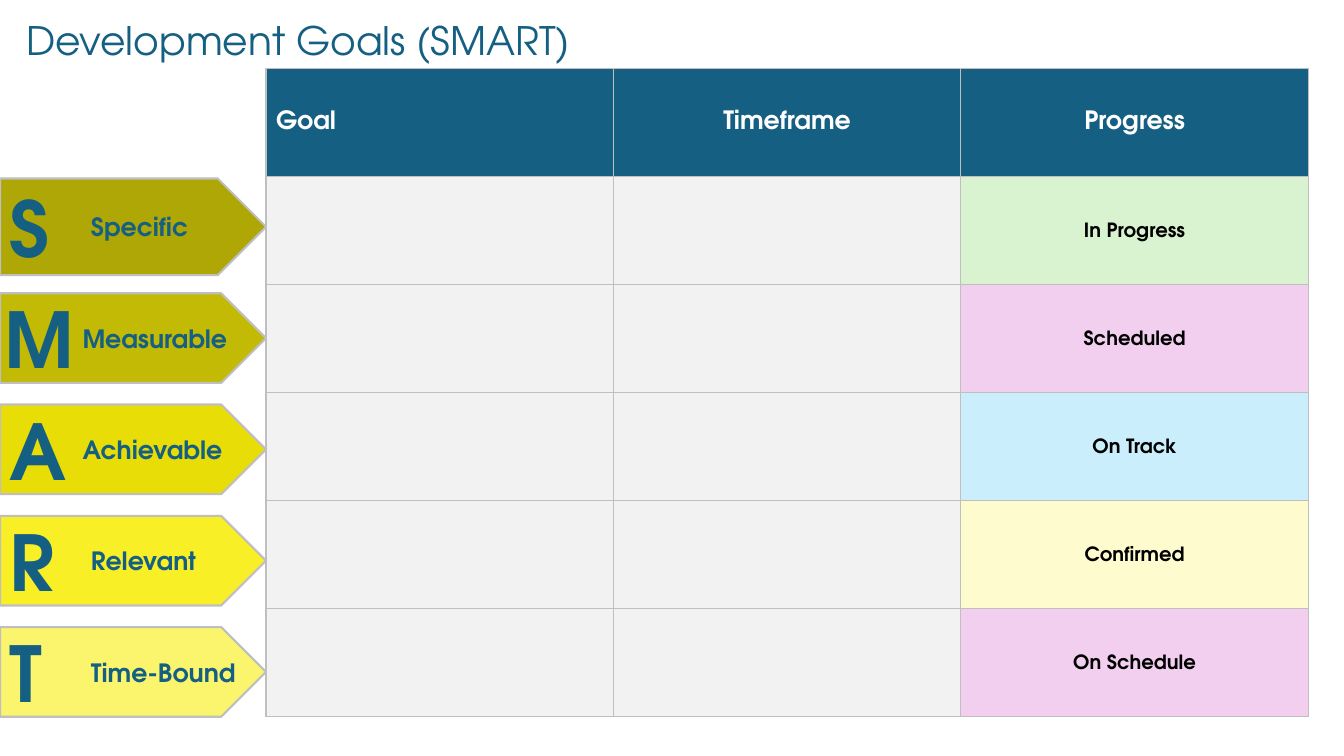
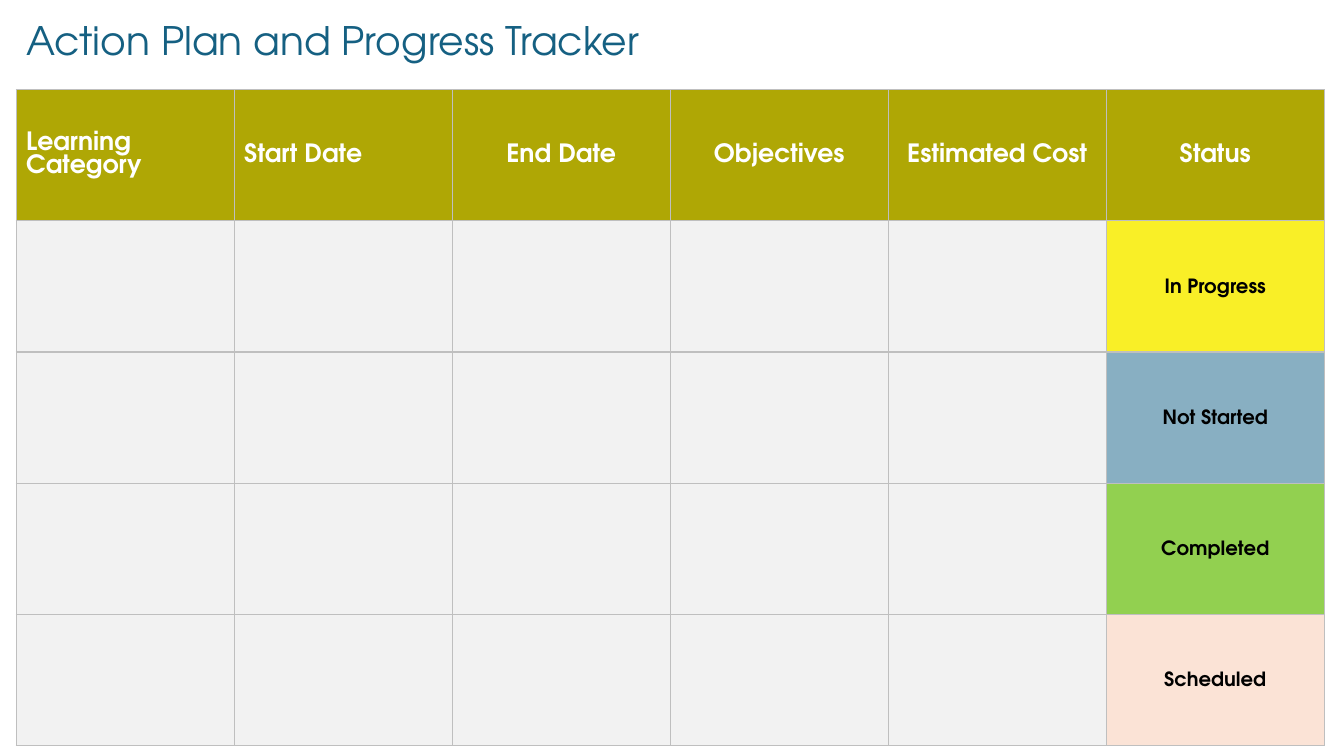
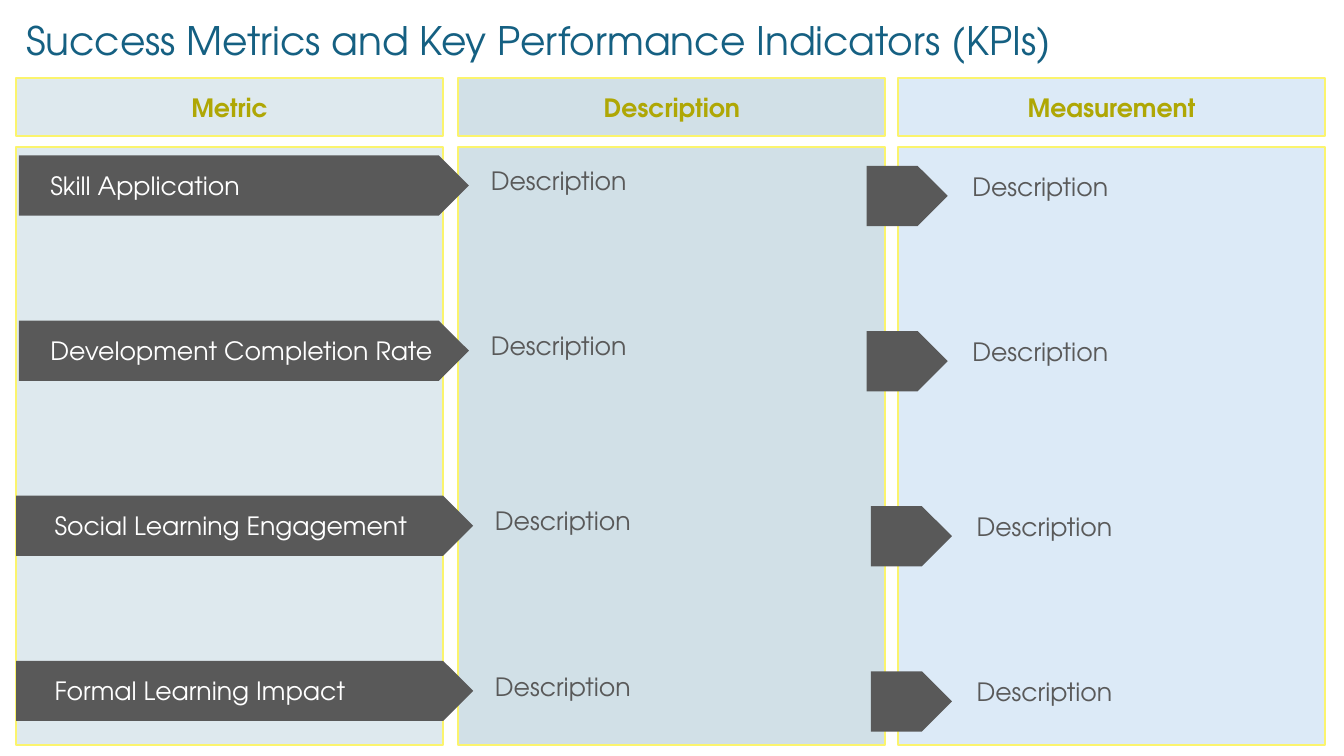
from pptx import Presentation
from pptx.util import Pt
from pptx.dml.color import RGBColor
from pptx.enum.shapes import MSO_SHAPE
from pptx.enum.text import MSO_ANCHOR, MSO_AUTO_SIZE, PP_ALIGN
from pptx.oxml.ns import qn
from lxml.etree import SubElement

# Shared look
FONT = "TeX Gyre Adventor"
EDGE = 11.5
COLORS = {
    "blue": "156082", "olive": "AFA705", "mustard": "C3BA05",
    "gold": "E8DD06", "yellow": "F9EF27", "lemon": "FBF46D",
    "white": "FFFFFF", "black": "000000", "line": "BFBFBF",
    "empty": "F2F2F2", "dark": "595959", "mint": "D9F2D0",
    "pink": "F2CFEE", "sky": "CAEEFB", "cream": "FEFCCE",
    "steel": "88AFC2", "green": "92D050", "peach": "FBE3D6",
    "mist": "DEE9EE", "haze": "D1E0E7", "pale": "DCEAF7",
}

# Slide contents
SMART = [  # word, arrow top, height, colour, letter left, word left
    ("Specific", 127.5, 69, "olive", 0, 65),
    ("Measurable", 209.5, 64, "mustard", -3.6, 59),
    ("Achievable", 289, 64, "gold", 0, 59),
    ("Relevant", 368.5, 64, "yellow", 0, 65),
    ("Time-Bound", 448, 64, "lemon", 0, 65),
]
GOALS = [("In Progress", "mint"), ("Scheduled", "pink"),
         ("On Track", "sky"), ("Confirmed", "cream"),
         ("On Schedule", "pink")]
PLAN = [("In Progress", "yellow"), ("Not Started", "steel"),
        ("Completed", "green"), ("Scheduled", "peach")]
PANELS = [("Metric", EDGE, "mist"), ("Description", 327.5, "haze"),
          ("Measurement", 641.5, "pale")]
METRICS = [  # name, arrow top, arrow left, shift of the row
    ("Skill Application", 111, 13.5, 0),
    ("Development Completion Rate", 229, 13.5, 0),
    ("Social Learning Engagement", 354, EDGE, 3),
    ("Formal Learning Impact", 472, EDGE, 3),
]


def rgb(name):
    return RGBColor.from_string(COLORS[name])


def write(frame, text, size, color, bold=False, align=PP_ALIGN.LEFT):
    frame.text = text
    para = frame.paragraphs[0]
    para.alignment = align
    font = para.runs[0].font
    font.name, font.size, font.bold = FONT, Pt(size), bold
    font.color.rgb = rgb(color)
    return para


def add_slide(deck, title, width=582):
    slide = deck.slides.add_slide(deck.slide_layouts[5])
    head = slide.shapes.title
    head.left, head.top = Pt(EDGE), Pt(8)
    head.width, head.height = Pt(width), Pt(41)
    frame = head.text_frame
    frame.auto_size = MSO_AUTO_SIZE.NONE
    frame.vertical_anchor = MSO_ANCHOR.TOP
    write(frame, title, 28, "blue")
    return slide


def add_box(slide, kind, left, top, width, height, fill, line=None):
    box = slide.shapes.add_shape(
        kind, Pt(left), Pt(top), Pt(width), Pt(height))
    box.shadow.inherit = False
    box.fill.solid()
    box.fill.fore_color.rgb = rgb(fill)
    if line:
        box.line.color.rgb = rgb(line)
        box.line.width = Pt(1.5)
    else:
        box.line.fill.background()
    return box


def add_arrow(slide, left, top, width, height, fill, line=None):
    return add_box(slide, MSO_SHAPE.PENTAGON, left, top, width, height,
                   fill, line)


def label(arrow, text, color, inset, bold=False):
    frame = arrow.text_frame
    frame.margin_left, frame.margin_right = Pt(inset), 0
    frame.vertical_anchor = MSO_ANCHOR.MIDDLE
    write(frame, text, 18, color, bold)


def add_text(slide, text, left, top, width, height, size, color,
             bold=False):
    box = slide.shapes.add_textbox(
        Pt(left), Pt(top), Pt(width), Pt(height))
    frame = box.text_frame
    frame.word_wrap = True
    frame.vertical_anchor = MSO_ANCHOR.MIDDLE
    write(frame, text, size, color, bold)


def paint(cell, fill):
    # Borders come before the fill in the cell properties
    props = cell._tc.get_or_add_tcPr()
    for side in ("lnL", "lnR", "lnT", "lnB"):
        line = SubElement(props, qn("a:" + side), w=str(Pt(1)))
        solid = SubElement(line, qn("a:solidFill"))
        SubElement(solid, qn("a:srgbClr"), val=COLORS["line"])
    cell.fill.solid()
    cell.fill.fore_color.rgb = rgb(fill)
    cell.vertical_anchor = MSO_ANCHOR.MIDDLE


def add_grid(slide, left, top, col, row, heads, fill, states, lefts):
    """Table with a header row and a coloured status in the last column."""
    rows, cols = len(states) + 1, len(heads)
    grid = slide.shapes.add_table(
        rows, cols, Pt(left), Pt(top), Pt(col * cols), Pt(row * rows)).table
    grid.first_row = grid.horz_banding = False
    for item in grid.columns:
        item.width = Pt(col)
    for item in grid.rows:
        item.height = Pt(row)
    # Header
    for i, head in enumerate(heads):
        cell = grid.cell(0, i)
        paint(cell, fill)
        align = PP_ALIGN.LEFT if i < lefts else PP_ALIGN.CENTER
        write(cell.text_frame, head, 18, "white", True, align)
    # Body
    for i, (state, color) in enumerate(states, 1):
        for j in range(cols - 1):
            paint(grid.cell(i, j), "empty")
        cell = grid.cell(i, cols - 1)
        paint(cell, color)
        cell.margin_left = cell.margin_right = Pt(5)
        cell.margin_top = cell.margin_bottom = 0
        para = write(cell.text_frame, state, 14, "black", True,
                     PP_ALIGN.CENTER)
        para.line_spacing, para.space_after = 1.15, Pt(8)


def add_goals(deck):
    slide = add_slide(deck, "Development Goals (SMART)")
    for word, top, high, fill, _, inset in SMART:
        arrow = add_arrow(slide, 0, top, 190, high, fill, "line")
        label(arrow, word, "blue", inset, True)
    add_grid(slide, 190, 49, 248.2, 77.15,
             ["Goal", "Timeframe", "Progress"], "blue", GOALS, 1)
    for word, top, high, _, left, _ in SMART:
        add_text(slide, word[0], left, top, 60, high, 55, "blue", True)


def add_plan(deck):
    slide = add_slide(deck, "Action Plan and Progress Tracker")
    heads = ["Learning Category", "Start Date", "End Date", "Objectives",
             "Estimated Cost", "Status"]
    add_grid(slide, EDGE, 64, 155.75, 93.75, heads, "olive", PLAN, 2)


def add_metrics(deck):
    slide = add_slide(
        deck, "Success Metrics and Key Performance Indicators (KPIs)", 935)
    # Column panels
    for name, left, fill in PANELS:
        head, _ = [add_box(slide, MSO_SHAPE.RECTANGLE, left, top, 305, high,
                           fill, "lemon")
                   for top, high in ((56, 41), (105, 427))]
        write(head.text_frame, name, 18, "olive", True, PP_ALIGN.CENTER)
    # Metric rows
    for name, top, left, shift in METRICS:
        arrow = add_arrow(slide, left, top, 335 + shift - left, 43, "dark")
        label(arrow, name, "white", 36 + shift - left)
        add_arrow(slide, 619 + shift, top + 7.5, 58, 43, "dark")
        for x, drop in ((343.5, 3.5), (687.5, 7.5)):
            add_text(slide, "Description", x + shift, top + drop, 260, 29,
                     18, "dark")


def main():
    deck = Presentation()
    deck.slide_width, deck.slide_height = Pt(960), Pt(540)
    add_goals(deck)
    add_plan(deck)
    add_metrics(deck)
    deck.save("out.pptx")


if __name__ == "__main__":
    main()
